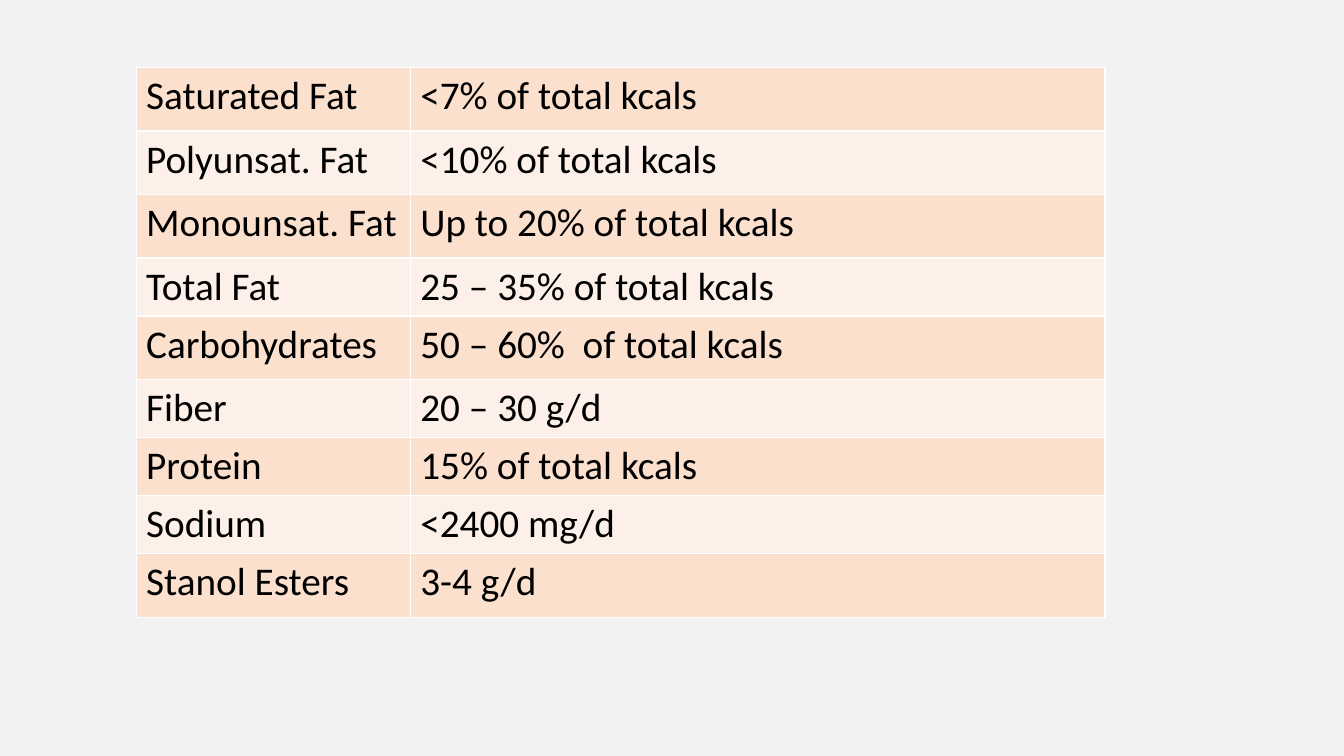
from pptx import Presentation
from pptx.dml.color import RGBColor
from pptx.oxml import parse_xml
from pptx.oxml.ns import nsdecls
from pptx.util import Inches, Pt


def rgb(code):
    return RGBColor.from_string(code)


def add_borders(cell, color, width):
    for side in ("lnL", "lnR", "lnT", "lnB"):
        cell._tc.get_or_add_tcPr().append(parse_xml(
            f'<a:{side} {nsdecls("a")} w="{Pt(width)}"><a:solidFill>'
            f'<a:srgbClr val="{color}"/></a:solidFill></a:{side}>'))


# Nutrient, recommended intake, row height
TALL, SHORT = 0.63, 0.51
rows = [
    ("Saturated Fat", "<7% of total kcals", TALL),
    ("Polyunsat. Fat", "<10% of total kcals", TALL),
    ("Monounsat. Fat", "Up to 20% of total kcals", TALL),
    ("Total Fat", "25 – 35% of total kcals", SHORT),
    ("Carbohydrates", "50 – 60%  of total kcals", TALL),
    ("Fiber", "20 – 30 g/d", SHORT),
    ("Protein", "15% of total kcals", SHORT),
    ("Sodium", "<2400 mg/d", SHORT),
    ("Stanol Esters", "3-4 g/d", TALL),
]
col_widths = (2.72, 6.89)
bands = ("FBE0CD", "FDF0E8")

# Slide and background
prs = Presentation()
prs.slide_width, prs.slide_height = Inches(13.33), Inches(7.5)
s = prs.slides.add_slide(prs.slide_layouts[6])
s.background.fill.solid()
s.background.fill.fore_color.rgb = rgb("F2F2F2")

# Nutrient table
height = sum(row[2] for row in rows)
table = s.shapes.add_table(len(rows), len(col_widths), Inches(1.35), Inches(0.67),
                           Inches(sum(col_widths)), Inches(height)).table
table.first_row = False
for col, width in zip(table.columns, col_widths):
    col.width = Inches(width)

for i, (nutrient, intake, row_height) in enumerate(rows):
    table.rows[i].height = Inches(row_height)
    for j, label in enumerate((nutrient, intake)):
        cell = table.cell(i, j)
        add_borders(cell, "FFFFFF", 1)
        cell.fill.solid()
        cell.fill.fore_color.rgb = rgb(bands[i % 2])
        cell.text = label
        font = cell.text_frame.paragraphs[0].font
        font.name, font.size = "Calibri", Pt(28)
        font.color.rgb = rgb("000000")

prs.save("out.pptx")
